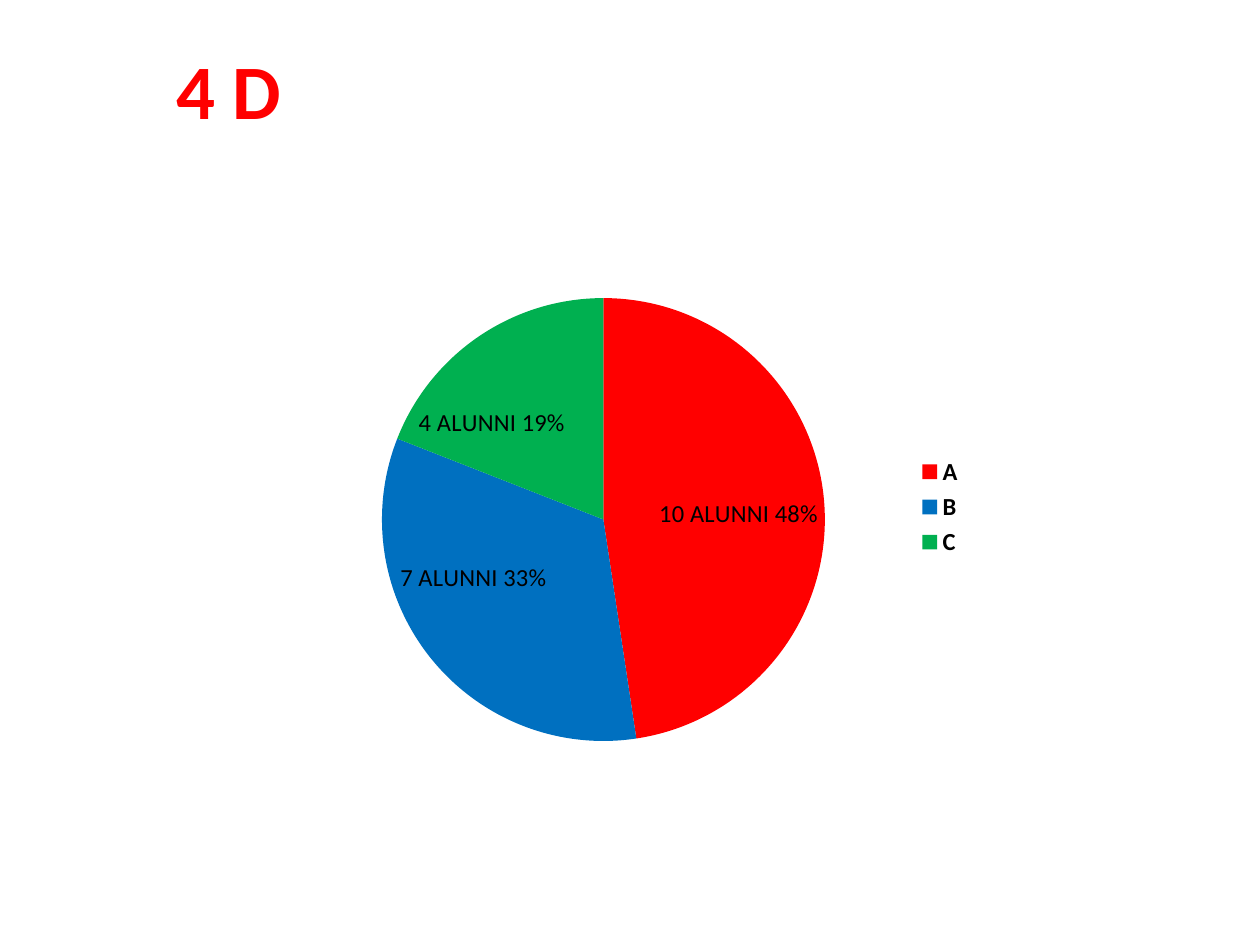
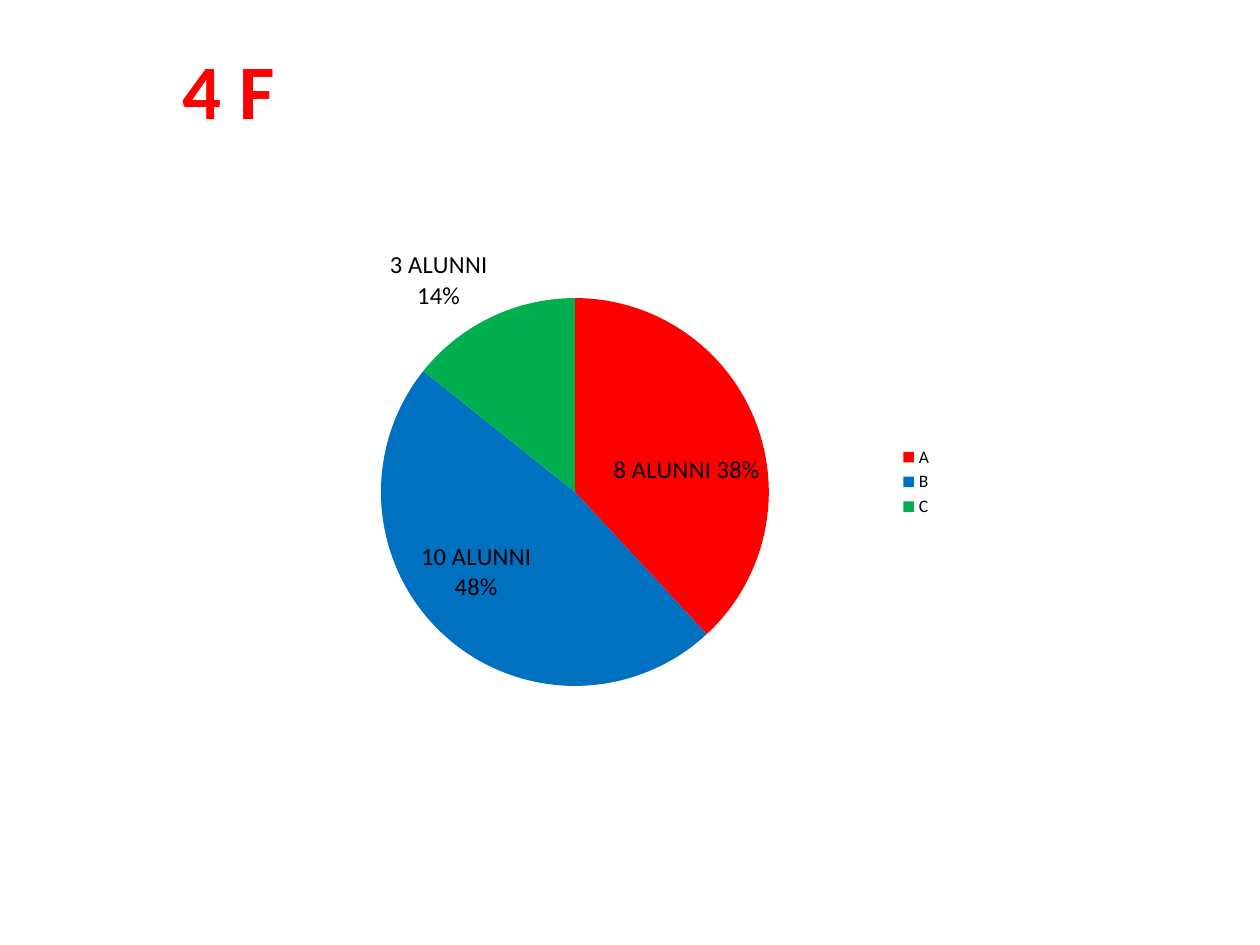
from lxml import etree
from pptx import Presentation
from pptx.chart.data import CategoryChartData as ChartData
from pptx.dml.color import RGBColor
from pptx.enum.chart import XL_CHART_TYPE as ChartType
from pptx.enum.chart import XL_LABEL_POSITION as LabelPosition
from pptx.enum.chart import XL_LEGEND_POSITION as LegendPosition
from pptx.enum.text import MSO_AUTO_SIZE as AutoSize
from pptx.enum.text import PP_ALIGN as Align
from pptx.oxml.ns import qn
from pptx.util import Cm, Pt

# Shared look
RED = RGBColor(0xFF, 0x00, 0x00)
BLUE = RGBColor(0x00, 0x70, 0xC0)
GREEN = RGBColor(0x00, 0xB0, 0x50)
BLACK = RGBColor(0x00, 0x00, 0x00)
FONT = "Calibri"
TITLE_FONT = {"name": FONT, "size": Pt(44), "bold": True}
CHART_FONT = {"name": FONT, "size": Pt(10)}
SERIES_LABEL_FONT = {"name": FONT, "size": Pt(14), "bold": True}
POINT_LABEL_FONT = {"name": FONT, "size": Pt(14), "bold": False}

# Boxes are left, top, width, height in cm
TITLE_BOX = (2.11, 0.74, 5, 2.13)
GRADES = {"A": RED, "B": BLUE, "C": GREEN}

# The pie is left, top, diameter in cm, measured from the chart box
CLASSES = [
    {"title": "4 D", "pupils": (10, 7, 4), "box": (4.29, 4.72, 15.39, 11),
     "pie": (3.41, 1.29, 8.93), "legend_font": {"size": Pt(14), "bold": True}},
    {"title": "4 F", "pupils": (8, 10, 3), "box": (4.6, 4.52, 14.45, 10.39),
     "pie": (3.08, 1.49, 7.82), "legend_font": {"size": Pt(10), "bold": False}},
]


def format_font(font, formats, color=BLACK):
    for name, value in formats.items():
        setattr(font, name, value)
    font.color.rgb = color


def add_title(slide, text, box):
    shape = slide.shapes.add_textbox(*map(Cm, box))
    frame = shape.text_frame
    frame.word_wrap = True
    frame.auto_size = AutoSize.SHAPE_TO_FIT_TEXT
    paragraph = frame.paragraphs[0]
    paragraph.alignment = Align.CENTER
    run = paragraph.add_run()
    run.text = text
    format_font(run.font, TITLE_FONT, RED)


def place_pie(chart, box, pie):
    """Fix the circle inside the chart box with a manual layout."""
    left, top, diameter = pie
    width, height = box[2:]
    plot_area = chart.element.find(".//" + qn("c:plotArea"))
    for old_layout in plot_area.findall(qn("c:layout")):
        plot_area.remove(old_layout)
    layout = etree.Element(qn("c:layout"))
    manual = etree.SubElement(layout, qn("c:manualLayout"))
    settings = {
        "layoutTarget": "inner", "xMode": "edge", "yMode": "edge",
        "x": left / width, "y": top / height,
        "w": diameter / width, "h": diameter / height,
    }
    for name, value in settings.items():
        etree.SubElement(manual, qn("c:" + name)).set("val", str(value))
    plot_area.insert(0, layout)


def add_grade_pie(slide, pupils, box, pie, legend_font):
    data = ChartData()
    data.categories = list(GRADES)
    data.add_series("Series 1", pupils)
    chart = slide.shapes.add_chart(ChartType.PIE, *map(Cm, box), data).chart
    chart.has_title = False
    format_font(chart.font, CHART_FONT)
    place_pie(chart, box, pie)

    # Legend
    chart.has_legend = True
    chart.legend.position = LegendPosition.RIGHT
    chart.legend.include_in_layout = False
    format_font(chart.legend.font, {"name": FONT, **legend_font})

    # Series labels
    plot = chart.plots[0]
    plot.vary_by_categories = True
    series = plot.series[0]
    labels = series.data_labels
    labels.show_value = True
    labels.show_percentage = True
    labels.position = LabelPosition.BEST_FIT
    format_font(labels.font, SERIES_LABEL_FONT)

    # Slices with their own wording
    for index, (count, color) in enumerate(zip(pupils, GRADES.values())):
        point = series.points[index]
        point.format.fill.solid()
        point.format.fill.fore_color.rgb = color
        point.format.line.fill.background()
        frame = point.data_label.text_frame
        frame.word_wrap = True
        run = frame.paragraphs[0].add_run()
        run.text = f"{count} ALUNNI {count / sum(pupils):.0%}"
        format_font(run.font, POINT_LABEL_FONT)
        point.data_label.position = LabelPosition.BEST_FIT


def add_class_slide(presentation, title, **chart_parts):
    slide = presentation.slides.add_slide(presentation.slide_layouts[6])
    add_title(slide, title, TITLE_BOX)
    add_grade_pie(slide, **chart_parts)


def main():
    presentation = Presentation()
    presentation.slide_width = Cm(25.4)
    presentation.slide_height = Cm(19.05)
    for school_class in CLASSES:
        add_class_slide(presentation, **school_class)
    presentation.save("out.pptx")


if __name__ == "__main__":
    main()
